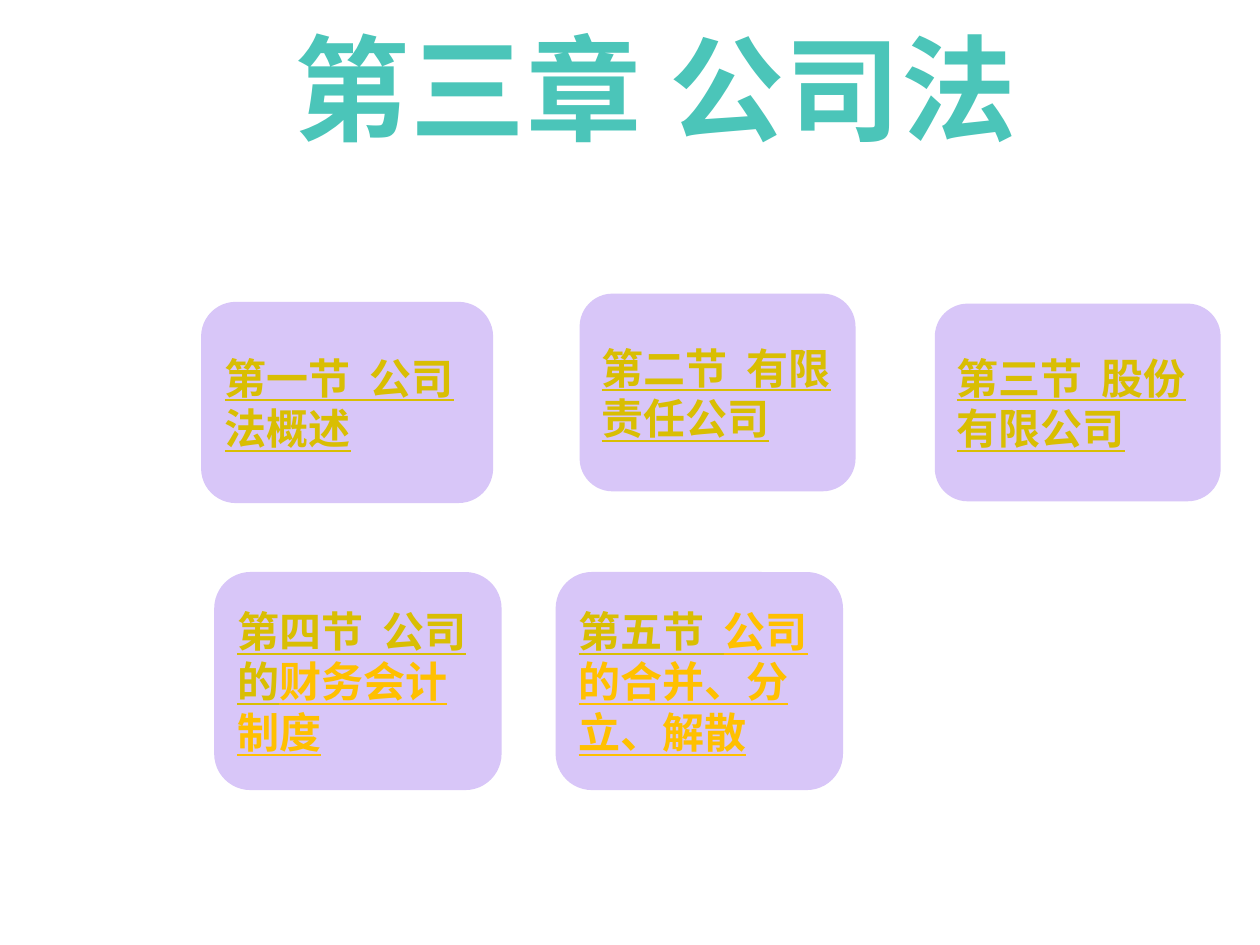
from pptx import Presentation
from pptx.dml.color import RGBColor
from pptx.enum.shapes import MSO_SHAPE as Shape
from pptx.enum.text import MSO_ANCHOR as Anchor, MSO_AUTO_SIZE as AutoSize, PP_ALIGN as Align
from pptx.util import Pt

TEAL = RGBColor(0x4B, 0xC5, 0xB9)
LILAC = RGBColor(0xD8, 0xC6, 0xF8)
OLIVE = RGBColor(0xD9, 0xBE, 0x02)
AMBER = RGBColor(0xFF, 0xC0, 0x00)

TOP_HEIGHT, BOTTOM_HEIGHT = 113, 124.6
SECTIONS = [
    ((115.9, 173.5, 164.9, TOP_HEIGHT), [("第一节  公司法概述", OLIVE)]),
    ((331.2, 167.8, 157.7, TOP_HEIGHT), [("第二节  有限责任公司", OLIVE)]),
    ((534.2, 173.5, 163.4, TOP_HEIGHT), [("第三节  股份有限公司", OLIVE)]),
    ((122.4, 326.9, 164.2, BOTTOM_HEIGHT), [("第四节  公司的", OLIVE), ("财务会计制度", AMBER)]),
    ((317.5, 326.9, 164.2, BOTTOM_HEIGHT), [("第五节  ", OLIVE), ("公司的合并、分立、解散", AMBER)]),
]


def format_run(run, font_name, size, color):
    run.font.name = font_name
    run.font.size = Pt(size)
    run.font.bold = True
    run.font.color.rgb = color


def place_title(slide, box):
    title = slide.shapes.title
    title.left, title.top, title.width, title.height = map(Pt, box)
    frame = title.text_frame
    frame.text = "第三章 公司法"
    frame.auto_size = AutoSize.NONE
    frame.vertical_anchor = Anchor.BOTTOM
    frame.margin_bottom = Pt(16)
    heading = frame.paragraphs[0]
    heading.alignment = Align.LEFT
    for run in heading.runs:
        format_run(run, "Lato", 65.7, TEAL)
        run.font._element.set("spc", "50")


def place_section(slide, box, parts):
    card = slide.shapes.add_shape(Shape.ROUNDED_RECTANGLE, *map(Pt, box))
    card.shadow.inherit = False
    card.fill.solid()
    card.fill.fore_color.rgb = LILAC
    card.line.fill.background()
    frame = card.text_frame
    frame.word_wrap = True
    frame.vertical_anchor = Anchor.MIDDLE
    label = frame.paragraphs[0]
    label.alignment = Align.LEFT
    for wording, color in parts:
        run = label.add_run()
        run.text = wording
        format_run(run, "Times New Roman", 24, color)
        run.font.underline = True
    return card


def main():
    deck = Presentation()
    deck.slide_width, deck.slide_height = Pt(720), Pt(540)
    slide = deck.slides.add_slide(deck.slide_layouts[5])
    place_title(slide, (161.3, 31.7, 477.4, 73.4))
    cards = [place_section(slide, box, parts) for box, parts in SECTIONS]
    outline = cards[0].line
    outline.color.rgb = LILAC
    outline.width = Pt(2)
    deck.save("out.pptx")


if __name__ == "__main__":
    main()
